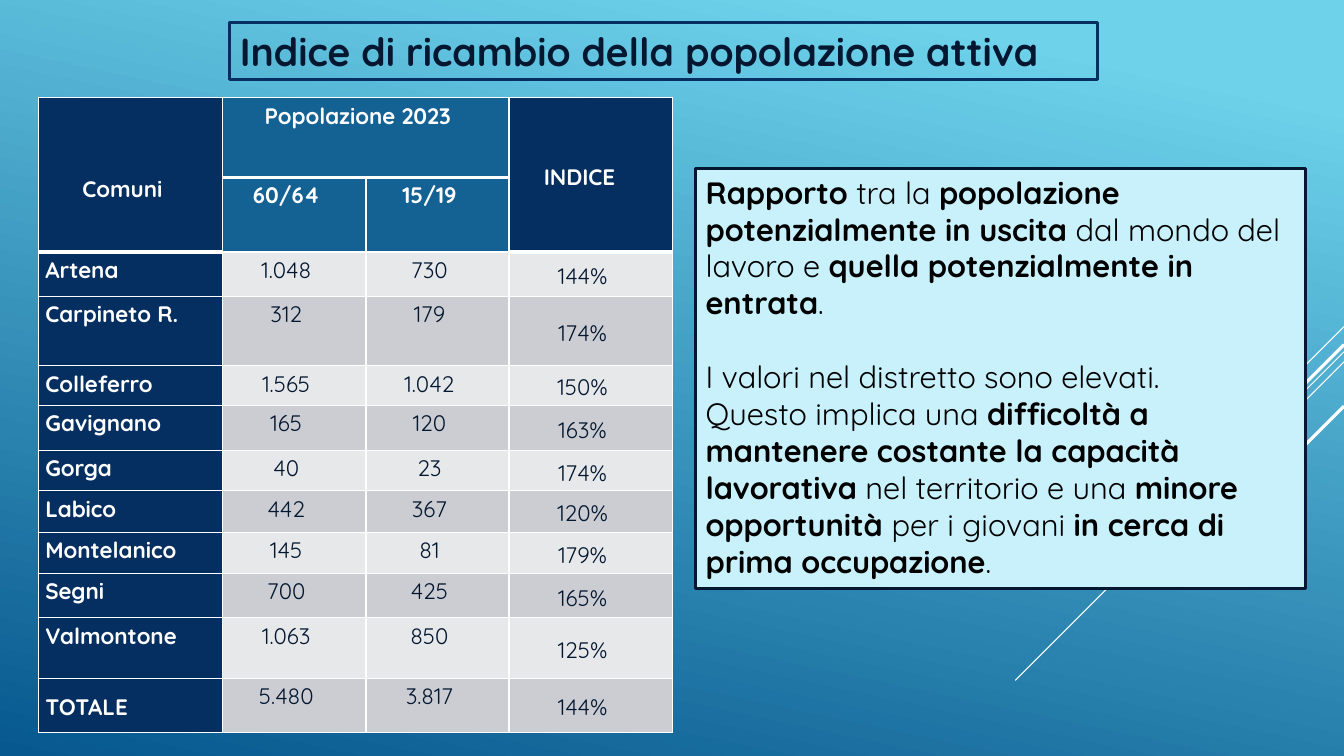
from typing import NamedTuple

from lxml import etree
from pptx import Presentation
from pptx import util as u
from pptx.dml.color import RGBColor
from pptx.enum import shapes, text
from pptx.oxml import ns

FONT = "Quicksand"
WHITE, BLACK, INK = "FFFFFF", "000000", "031730"
NAVY, BLUE, PALE = "052F61", "146194", "C8F1FB"
BANDS = ("E7E8EA", "CCCDD2")
LEFT, CENTER, JUSTIFY = text.PP_ALIGN.LEFT, text.PP_ALIGN.CENTER, text.PP_ALIGN.JUSTIFY


class Ray(NamedTuple):
    """Diagonal line at 45 degrees, running down and left from the slide's right edge."""
    top: float
    length: float
    weight: float


class Box(NamedTuple):
    left: float
    top: float
    width: float
    height: float
    border: str
    fill: str | None
    size: int
    color: str


class Piece(NamedTuple):
    text: str
    bold: bool = False


RAYS = [Ray(3.24, 1, 0.75), Ray(3.49, 3.26, 0.75), Ray(3.59, 2.07, 0.75),
        Ray(3.42, 1.91, 2.25), Ray(4.03, 1.39, 2.25)]

TITLE_BOX = Box(2.28, 0.22, 8.61, 0.57, NAVY, None, 28, INK)
TITLE = [[Piece("Indice di ricambio della popolazione attiva", True)]]

COMMENT_BOX = Box(6.9, 1.67, 6.05, 4.17, INK, PALE, 22, BLACK)
COMMENT = [
    [Piece("Rapporto", True), Piece(" tra la "),
     Piece("popolazione potenzialmente in uscita ", True),
     Piece("dal mondo del lavoro e "),
     Piece("quella potenzialmente in entrata", True), Piece(".")],
    [Piece("I valori nel distretto sono elevati.")],
    [Piece("Questo implica una "),
     Piece("difficoltà a mantenere costante la capacità lavorativa", True),
     Piece(" nel territorio e una "), Piece("minore opportunità ", True),
     Piece("per i giovani "), Piece("in cerca di prima occupazione", True), Piece(".")],
]

COLUMN_WIDTHS = [1.83, 1.42, 1.42, 1.62]
ROW_HEIGHTS = [0.79, 0.74, 0.44, 0.69, 0.39, 0.45, 0.4, 0.41, 0.41, 0.44, 0.6, 0.54]
HEADER_ROWS = 2
ROWS = [
    ("Comuni", "Popolazione 2023", "", "INDICE "),
    ("", "60/64", "15/19", ""),
    ("Artena", "1.048", "730", "144%"),
    ("Carpineto R.", "312", "179", "174%"),
    ("Colleferro", "1.565", "1.042", "150%"),
    ("Gavignano", "165", "120", "163%"),
    ("Gorga", "40", "23", "174%"),
    ("Labico", "442", "367", "120%"),
    ("Montelanico", "145", "81", "179%"),
    ("Segni", "700", "425", "165%"),
    ("Valmontone", "1.063", "850", "125%"),
    ("TOTALE", "5.480", "3.817", "144%"),
]
MERGES = [((0, 0), (1, 0)), ((0, 1), (0, 2)), ((0, 3), (1, 3))]
THICK_BOTTOMS = {(0, 0), (1, 0), (0, 1), (0, 2), (0, 3), (1, 3)}


def rgb(color: str) -> RGBColor:
    return RGBColor.from_string(color)


def format_run(run, size: float, color: str, bold: bool) -> None:
    run.font.name = FONT
    run.font.size = u.Pt(size)
    run.font.bold = bold
    run.font.color.rgb = rgb(color)


def paint_background(slide) -> None:
    fill = slide.background.fill
    fill.gradient()
    fill.gradient_angle = 258
    for stop, (position, color) in zip(fill.gradient_stops, [(0.1, "6ED2EB"), (1, "06588E")]):
        stop.position = position
        stop.color.rgb = rgb(color)


def draw_ray(slide, ray: Ray) -> None:
    right = 13.33
    connector = slide.shapes.add_connector(
        shapes.MSO_CONNECTOR.STRAIGHT, u.Inches(right), u.Inches(ray.top),
        u.Inches(right - ray.length), u.Inches(ray.top + ray.length))
    connector.line.color.rgb = rgb(WHITE)
    connector.line.width = u.Pt(ray.weight)
    etree.SubElement(connector._element.spPr, ns.qn("a:effectLst"))


def draw_box(slide, box: Box, paragraphs: list[list[Piece]]):
    shape = slide.shapes.add_textbox(
        *(u.Inches(n) for n in (box.left, box.top, box.width, box.height)))
    shape.line.color.rgb = rgb(box.border)
    shape.line.width = u.Pt(2.25)
    if box.fill:
        shape.fill.solid()
        shape.fill.fore_color.rgb = rgb(box.fill)
    frame = shape.text_frame
    frame.word_wrap = True
    frame.auto_size = text.MSO_AUTO_SIZE.SHAPE_TO_FIT_TEXT
    for index, pieces in enumerate(paragraphs):
        paragraph = frame.add_paragraph() if index else frame.paragraphs[0]
        for piece in pieces:
            run = paragraph.add_run()
            run.text = piece.text
            format_run(run, box.size, box.color, piece.bold)
    return shape


def set_borders(cell, row: int, column: int) -> None:
    """White cell borders, thicker under the header cells."""
    properties = cell._tc.get_or_add_tcPr()
    weights = {
        "L": 1,
        "R": 1,
        "T": 3 if (row - 1, column) in THICK_BOTTOMS else 1,
        "B": 3 if (row, column) in THICK_BOTTOMS else 1,
    }
    for position, (side, weight) in enumerate(weights.items()):
        line = etree.Element(ns.qn(f"a:ln{side}"), w=str(u.Pt(weight)))
        solid = etree.SubElement(line, ns.qn("a:solidFill"))
        etree.SubElement(solid, ns.qn("a:srgbClr"), val=WHITE)
        properties.insert(position, line)


def cell_fill(row: int, column: int) -> str:
    if column == 0 or (row < HEADER_ROWS and column == 3):
        return NAVY
    return BLUE if row < HEADER_ROWS else BANDS[row % 2]


def format_cell(cell, row: int, column: int) -> None:
    header = row < HEADER_ROWS
    total = row == len(ROWS) - 1
    label = column == 0 and not header
    cell.text_frame.text = ROWS[row][column]
    cell.fill.solid()
    cell.fill.fore_color.rgb = rgb(cell_fill(row, column))
    cell.margin_left = u.Inches(0.07)
    cell.margin_right = u.Inches(0.07 if label else 0.23)
    cell.margin_top = cell.margin_bottom = 0
    middle = column == 3 or (column == 0 and (header or total))
    cell.vertical_anchor = text.MSO_ANCHOR.MIDDLE if middle else text.MSO_ANCHOR.TOP
    paragraph = cell.text_frame.paragraphs[0]
    paragraph.alignment = (LEFT if total else JUSTIFY) if label else CENTER
    paragraph.line_spacing = 2.0 if (row, column) == (0, 0) else 1.15
    paragraph.space_after = u.Pt(10)
    strong = header or label
    for run in paragraph.runs:
        format_run(run, 16, WHITE if strong else INK, strong)
    set_borders(cell, row, column)


def draw_table(slide) -> None:
    table = slide.shapes.add_table(
        len(ROWS), len(COLUMN_WIDTHS), u.Inches(0.38), u.Inches(0.97),
        u.Inches(sum(COLUMN_WIDTHS)), u.Inches(sum(ROW_HEIGHTS))).table
    table.first_row = table.horz_banding = False
    for column, width in zip(table.columns, COLUMN_WIDTHS):
        column.width = u.Inches(width)
    for row, height in zip(table.rows, ROW_HEIGHTS):
        row.height = u.Inches(height)
    for row in range(len(ROWS)):
        for column in range(len(COLUMN_WIDTHS)):
            format_cell(table.cell(row, column), row, column)
    for first, last in MERGES:
        table.cell(*first).merge(table.cell(*last))


def main() -> None:
    presentation = Presentation()
    presentation.slide_width, presentation.slide_height = u.Inches(13.33), u.Inches(7.5)
    slide = presentation.slides.add_slide(presentation.slide_layouts[6])
    paint_background(slide)
    for ray in RAYS:
        draw_ray(slide, ray)
    draw_box(slide, TITLE_BOX, TITLE)
    draw_table(slide)
    comment = draw_box(slide, COMMENT_BOX, COMMENT)
    comment.text_frame.paragraphs[1].space_before = u.Pt(26.4)
    presentation.save("out.pptx")


if __name__ == "__main__":
    main()
